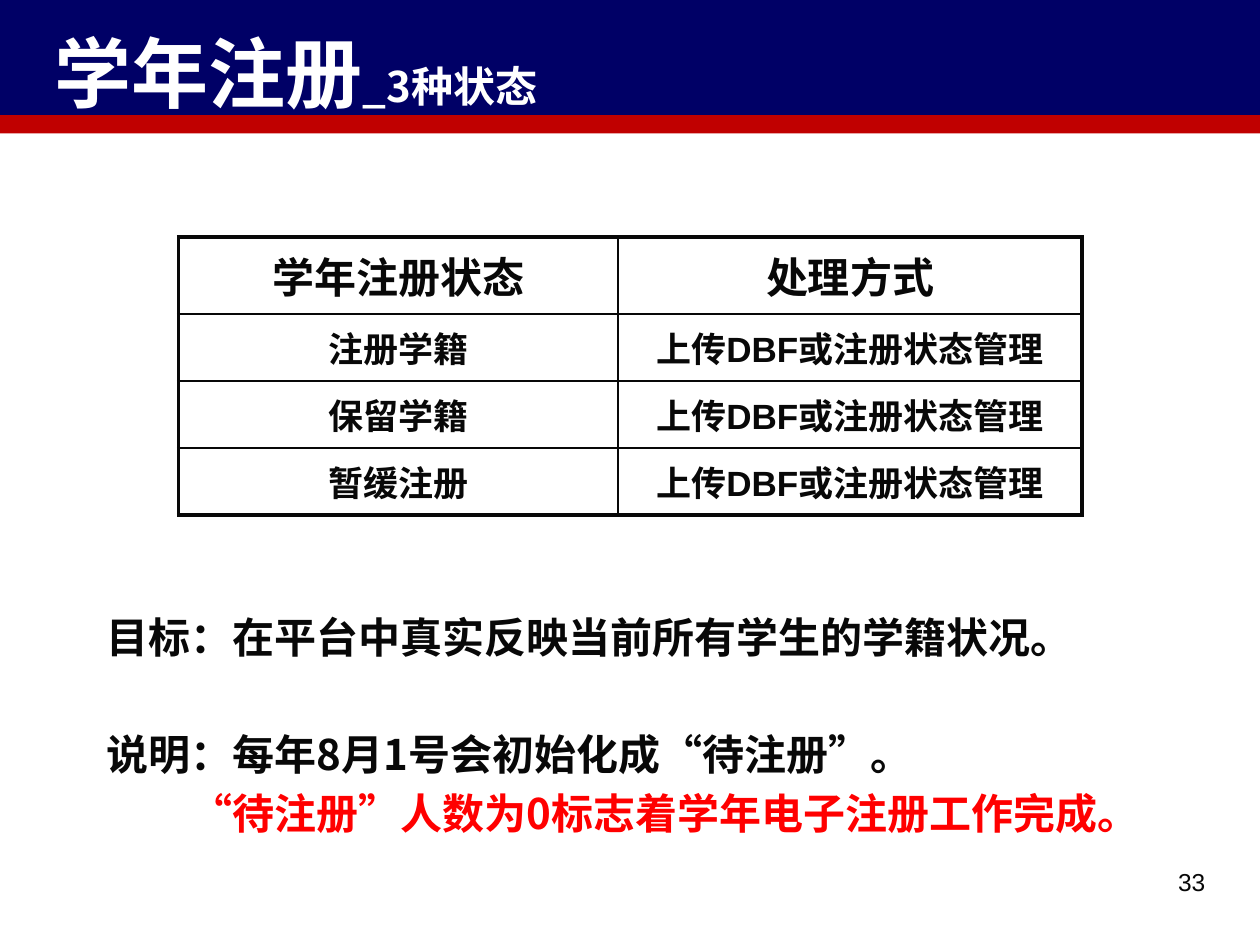
import pptx
import pptx.dml.color
import pptx.enum.shapes
import pptx.enum.text
import pptx.oxml
import pptx.oxml.ns
import pptx.util
from pptx.util import Cm

COLORS = {"navy": "000066", "red_bar": "C00000", "white": "FFFFFF",
          "ink": "080808", "alert": "FF0000"}
CJK = "Noto Sans CJK SC"
ALIGN = pptx.enum.text.PP_ALIGN
MIDDLE = pptx.enum.text.MSO_ANCHOR.MIDDLE

STATUS_ROWS = [("学年注册状态", "处理方式")] + [
    (status, "上传DBF或注册状态管理") for status in ("注册学籍", "保留学籍", "暂缓注册")]


def color(name):
    return pptx.dml.color.RGBColor.from_string(COLORS[name])


def set_font(font, size, tint="ink", bold=True, latin=CJK):
    font.name, font.size, font.bold = latin, pptx.util.Pt(size), bold
    font.color.rgb = color(tint)
    # East Asian typeface follows the Latin one
    east_asian = pptx.oxml.parse_xml(
        f'<a:ea {pptx.oxml.ns.nsdecls("a")} typeface="{CJK}"/>')
    font._element.find(pptx.oxml.ns.qn("a:latin")).addnext(east_asian)


def add_bar(page, top, height, tint):
    bar = page.shapes.add_shape(pptx.enum.shapes.MSO_SHAPE.RECTANGLE,
                                0, Cm(top), Cm(25.4), Cm(height))
    bar.shadow.inherit = False
    bar.fill.solid()
    bar.fill.fore_color.rgb = color(tint)
    bar.line.fill.background()


def add_box(page, left, top, width, height):
    box = page.shapes.add_textbox(Cm(left), Cm(top), Cm(width), Cm(height))
    box.text_frame.word_wrap = True
    return box.text_frame


def add_title(page):
    frame = add_box(page, 0.85, 0.42, 21.59, 1.7)
    frame.vertical_anchor = MIDDLE
    para = frame.paragraphs[0]
    para.line_spacing = 1.2
    for text, size in (("学年注册", 44), ("_3种状态", 24)):
        span = para.add_run()
        span.text = text
        set_font(span.font, size, "white")


def set_border(cell, side, points):
    line = pptx.oxml.parse_xml(
        f'<a:ln{side} {pptx.oxml.ns.nsdecls("a")} w="{pptx.util.Pt(points)}">'
        f'<a:solidFill><a:srgbClr val="{COLORS["ink"]}"/></a:solidFill></a:ln{side}>')
    cell._tc.get_or_add_tcPr().append(line)


def add_status_table(page, rows):
    last_row, last_column = len(rows) - 1, len(rows[0]) - 1
    table = page.shapes.add_table(len(rows), len(rows[0]), Cm(3.6), Cm(4.78),
                                  Cm(18.21), Cm(5.6)).table
    table.first_row = table.horz_banding = False
    for column, width in zip(table.columns, (8.86, 9.35)):
        column.width = Cm(width)
    for r, texts in enumerate(rows):
        table.rows[r].height = Cm(1.55 if r == 0 else 1.35)
        for c, text in enumerate(texts):
            cell = table.cell(r, c)
            cell.text = text
            cell.vertical_anchor = MIDDLE
            para = cell.text_frame.paragraphs[0]
            para.alignment = ALIGN.CENTER
            set_font(para.font, 24 if r == 0 else 20, latin="Arial")
            # Thick outer frame, thin inner rules
            outer = {"L": c == 0, "R": c == last_column,
                     "T": r == 0, "B": r == last_row}
            for side, is_outer in outer.items():
                set_border(cell, side, 2.25 if is_outer else 1)
            cell.fill.background()


def add_notes(page):
    pitch = pptx.util.Pt(33.4)
    lines = [("目标：在平台中真实反映当前所有学生的学籍状况。", "ink", 0, 0),
             ("说明：每年8月1号会初始化成“待注册”。", "ink", pitch, 0),
             ("“待注册”人数为0标志着学年电子注册工作完成。", "alert", 0, Cm(1.7))]
    frame = add_box(page, 1.9, 10.92, 22.4, 6.8)
    frame.margin_top = Cm(1.25)
    for i, (text, tint, before, indent) in enumerate(lines):
        para = frame.add_paragraph() if i else frame.paragraphs[0]
        para.text = text
        para.line_spacing = pitch
        para.space_before = before
        para._p.get_or_add_pPr().set("marL", str(indent))
        set_font(para.font, 24, tint)


def add_page_number(page):
    para = add_box(page, 18.2, 17.35, 6.35, 1.32).paragraphs[0]
    para.text = "33"
    para.alignment = ALIGN.RIGHT
    set_font(para.font, 14, bold=False, latin="Arial")


def main():
    deck = pptx.Presentation()
    deck.slide_width, deck.slide_height = Cm(25.4), Cm(19.05)
    page = deck.slides.add_slide(deck.slide_layouts[6])

    # Header band
    add_bar(page, 2, 0.69, "red_bar")
    add_bar(page, 0, 2.32, "navy")
    add_title(page)

    # Content
    add_status_table(page, STATUS_ROWS)
    add_notes(page)
    add_page_number(page)

    deck.save("out.pptx")


if __name__ == "__main__":
    main()
